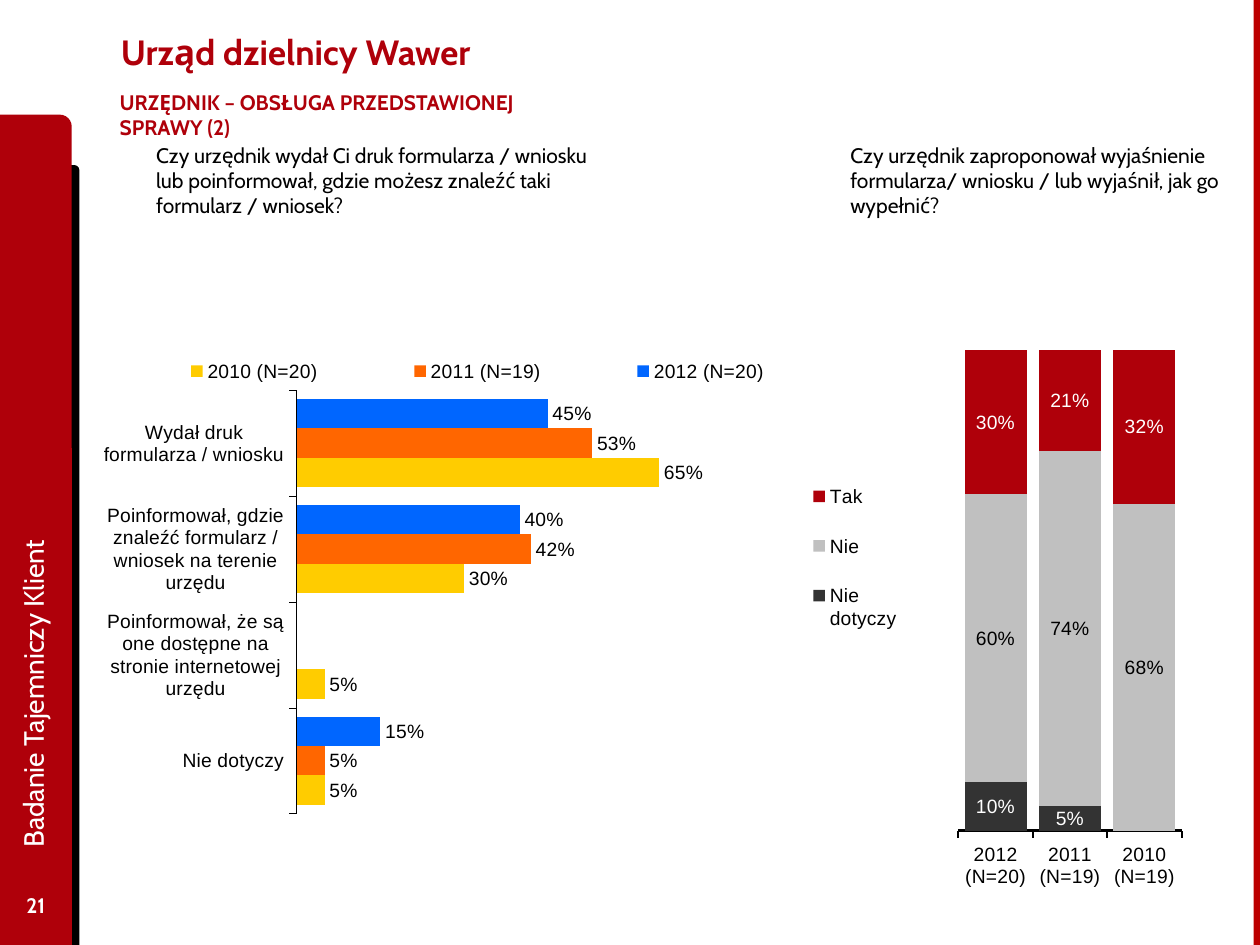
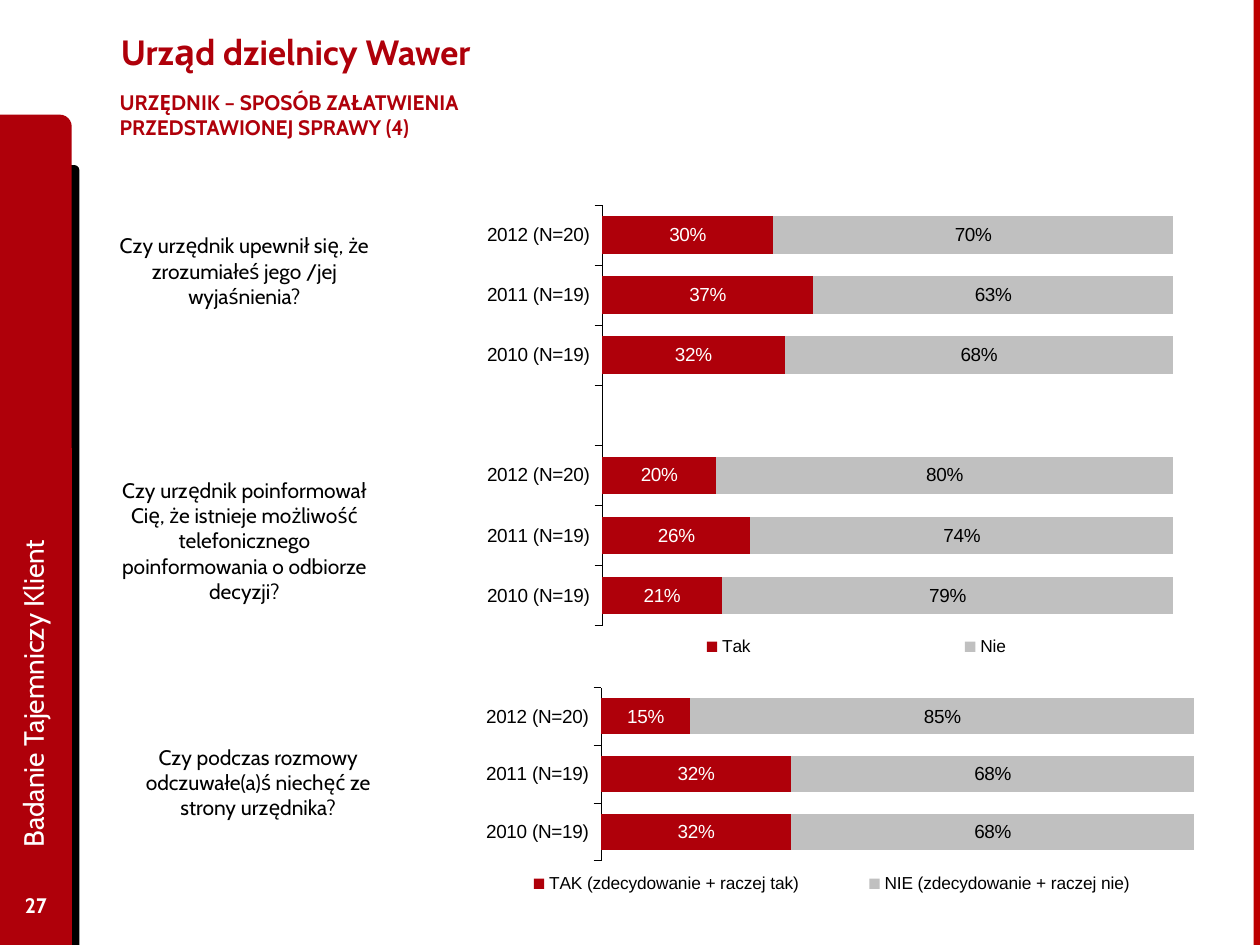
from collections import namedtuple
from dataclasses import dataclass

from lxml import etree
from pptx import Presentation
from pptx.chart.data import CategoryChartData
from pptx.dml.color import RGBColor
from pptx.enum.chart import (XL_CHART_TYPE, XL_LABEL_POSITION,
                             XL_LEGEND_POSITION, XL_TICK_MARK)
from pptx.enum.shapes import MSO_SHAPE
from pptx.enum.text import MSO_ANCHOR, MSO_AUTO_SIZE, PP_ALIGN
from pptx.oxml.ns import qn
from pptx.util import Inches, Pt

LEFT, CENTER = PP_ALIGN.LEFT, PP_ALIGN.CENTER
TOP, MIDDLE = MSO_ANCHOR.TOP, MSO_ANCHOR.MIDDLE
RECTANGLE, ROUND_CORNER = MSO_SHAPE.RECTANGLE, MSO_SHAPE.ROUND_1_RECTANGLE
COLUMNS_FULL = XL_CHART_TYPE.COLUMN_STACKED_100
BARS_CLUSTERED = XL_CHART_TYPE.BAR_CLUSTERED
BARS_STACKED = XL_CHART_TYPE.BAR_STACKED
LABEL_CENTER = XL_LABEL_POSITION.CENTER
LABEL_OUTSIDE = XL_LABEL_POSITION.OUTSIDE_END
LEGEND_LEFT = XL_LEGEND_POSITION.LEFT
LEGEND_RIGHT = XL_LEGEND_POSITION.RIGHT
LEGEND_BOTTOM = XL_LEGEND_POSITION.BOTTOM
TICK_OUTSIDE, TICK_NONE = XL_TICK_MARK.OUTSIDE, XL_TICK_MARK.NONE
TITLE_ONLY = 5
COLUMNS, ROWS = 100, 75  # grid over the whole slide

Series = namedtuple("Series", "name values fill label")


@dataclass(frozen=True)
class Theme:
    red: str = "AF000A"
    edge: str = "BD0000"
    black: str = "000000"
    white: str = "FFFFFF"
    grey: str = "C0C0C0"
    dark: str = "333333"
    blue: str = "0066FF"
    orange: str = "FF6600"
    yellow: str = "FFCC00"
    text_font: str = "Cabin"
    chart_font: str = "Arial"
    title: float = 20
    side: float = 16
    body: float = 12
    chart: float = 11
    small_chart: float = 10.8
    small_legend: float = 9.9


THEME = Theme()


def rgb(colour):
    return RGBColor.from_string(colour)


def manual_layout(shares, inner=False):
    """Return a chart layout element from left, top, width, height shares."""
    layout = etree.Element(qn("c:layout"))
    manual = etree.SubElement(layout, qn("c:manualLayout"))
    settings = [("layoutTarget", "inner")] if inner else []
    settings += [("xMode", "edge"), ("yMode", "edge")]
    settings += zip("xywh", shares)
    for tag, value in settings:
        etree.SubElement(manual, qn(f"c:{tag}")).set("val", str(value))
    return layout


def drop_layout(element):
    for layout in element.findall(qn("c:layout")):
        element.remove(layout)


class Report:
    def __init__(self, theme):
        self.theme = theme
        self.deck = Presentation()
        self.deck.slide_width, self.deck.slide_height = Inches(10), Inches(7.5)
        self.slide = None

    def place(self, left, top, width, height):
        """Turn grid columns and rows into slide lengths."""
        column = self.deck.slide_width / COLUMNS
        row = self.deck.slide_height / ROWS
        return (round(left * column), round(top * row),
                round(width * column), round(height * row))

    def style(self, frame, size, colour, bold=False, align=LEFT, anchor=TOP):
        frame.vertical_anchor = anchor
        for para in frame.paragraphs:
            para.alignment = align
            for span in para.runs:
                span.font.name = self.theme.text_font
                span.font.size = Pt(size)
                span.font.bold = bold
                span.font.color.rgb = rgb(colour)

    def band(self, kind, cells, colour):
        shape = self.slide.shapes.add_shape(kind, *self.place(*cells))
        shape.shadow.inherit = False
        shape.fill.solid()
        shape.fill.fore_color.rgb = rgb(colour)
        shape.line.fill.background()

    def text(self, words, cells, size, colour, **look):
        box = self.slide.shapes.add_textbox(*self.place(*cells))
        box.text_frame.word_wrap = True
        box.text_frame.text = words
        self.style(box.text_frame, size, colour, **look)
        return box

    def question(self, words, cells, align=LEFT):
        box = self.text(words, cells, self.theme.body, self.theme.black, align=align)
        box.text_frame.auto_size = MSO_AUTO_SIZE.SHAPE_TO_FIT_TEXT

    def page(self, title, subtitle, number):
        """Start a slide with its bands, headings and side label."""
        theme = self.theme
        self.slide = self.deck.slides.add_slide(self.deck.slide_layouts[TITLE_ONLY])
        self.band(ROUND_CORNER, (3.9, 13.1, 2.4, 61.9), theme.black)
        self.band(ROUND_CORNER, (0, 9.1, 5.7, 65.9), theme.red)
        self.band(RECTANGLE, (99.5, 0, 0.5, ROWS), theme.edge)

        heading = self.slide.shapes.title
        heading.left, heading.top, heading.width, heading.height = self.place(
            8.6, 0.5, 77.7, 7.2)
        heading.text_frame.text = title
        heading.text_frame.auto_size = MSO_AUTO_SIZE.NONE
        self.style(heading.text_frame, theme.title, theme.red, bold=True, anchor=MIDDLE)

        frame = self.text(subtitle, (7.5, 6.6, 38.5, 3.3), theme.body, theme.red,
                          bold=True).text_frame
        frame.word_wrap = False
        frame.margin_left = frame.margin_right = Inches(0.2)

        self.text(number, (0, 69.8, 5.7, 4), theme.body, theme.white,
                  bold=True, align=CENTER, anchor=MIDDLE)
        side = self.text("Badanie Tajemniczy Klient", (-26.2, 36.9, 57.6, 5.1),
                         theme.side, theme.white, anchor=MIDDLE)
        side.rotation = 270

    def chart(self, kind, cells, categories, series, plot_area, legend, legend_area,
              size, legend_size, gap=60, axis_width=0.25):
        data = CategoryChartData(number_format="0%")
        data.categories = categories
        for item in series:
            data.add_series(item.name, item.values)
        chart = self.slide.shapes.add_chart(kind, *self.place(*cells), data).chart
        chart.has_title = False
        chart.font.name = self.theme.chart_font
        chart.font.size = Pt(size)
        chart.font.color.rgb = rgb(self.theme.black)

        # Bars and their labels
        clustered = kind == BARS_CLUSTERED
        plot = chart.plots[0]
        plot.vary_by_categories = False
        plot.gap_width = gap
        plot.overlap = 0 if clustered else 100
        for drawn, item in zip(plot.series, series):
            drawn.invert_if_negative = False
            drawn.format.fill.solid()
            drawn.format.fill.fore_color.rgb = rgb(item.fill)
            labels = drawn.data_labels
            labels.show_value = True
            labels.number_format = "0%"
            labels.number_format_is_linked = False
            labels.position = LABEL_OUTSIDE if clustered else LABEL_CENTER
            labels.font.name = self.theme.chart_font
            labels.font.size = Pt(size)
            labels.font.color.rgb = rgb(item.label)

        # Axes
        values = chart.value_axis
        values.minimum_scale, values.maximum_scale = 0, 1
        values.major_unit = 0.2
        values.has_major_gridlines = False
        values.visible = False
        axis = chart.category_axis
        axis.reverse_order = kind != COLUMNS_FULL
        axis.has_major_gridlines = False
        axis.major_tick_mark, axis.minor_tick_mark = TICK_OUTSIDE, TICK_NONE
        axis.format.line.color.rgb = rgb(self.theme.black)
        axis.format.line.width = Pt(axis_width)

        # Legend and plot area
        chart.has_legend = True
        chart.legend.position = legend
        chart.legend.include_in_layout = False
        chart.legend.font.name = self.theme.chart_font
        chart.legend.font.size = Pt(legend_size)
        chart.legend.font.color.rgb = rgb(self.theme.black)
        key = chart.legend._element
        drop_layout(key)
        key.find(qn("c:legendPos")).addnext(manual_layout(legend_area))
        area = chart._chartSpace.chart.plotArea
        drop_layout(area)
        area.insert(0, manual_layout(plot_area, inner=True))

    def yes_no_chart(self, cells, categories, names, shares, **layout):
        """Stacked bars where the second series completes the first."""
        theme = self.theme
        rest = [None if share is None else round(1 - share, 2) for share in shares]
        series = [Series(names[0], shares, theme.red, theme.white),
                  Series(names[1], rest, theme.grey, theme.black)]
        self.chart(BARS_STACKED, cells, categories, series, size=theme.small_chart,
                   legend_size=theme.small_legend, **layout)


def form_slide(report):
    theme = report.theme
    report.page("Urząd dzielnicy Wawer",
                "URZĘDNIK – OBSŁUGA PRZEDSTAWIONEJ SPRAWY (2)", "21")
    report.question("Czy urzędnik zaproponował wyjaśnienie formularza/ wniosku / "
                    "lub wyjaśnił, jak go wypełnić?", (66.5, 10.8, 31.5, 7.1))
    report.question("Czy urzędnik wydał Ci druk formularza / wniosku lub poinformował, "
                    "gdzie możesz znaleźć taki formularz / wniosek?",
                    (11.4, 10.8, 36.9, 7.1))
    report.chart(
        COLUMNS_FULL, (61.9, 24.9, 32.2, 47.7), YEARS,
        [Series("Nie dotyczy", (0.1, 0.05, None), theme.dark, theme.white),
         Series("Nie", (0.6, 0.74, 0.68), theme.grey, theme.black),
         Series("Tak", (0.3, 0.21, 0.32), theme.red, theme.white)],
        plot_area=(0.44, 0.06, 0.55, 0.8), legend=LEGEND_LEFT,
        legend_area=(0.05, 0.24, 0.27, 0.33), size=theme.chart,
        legend_size=theme.chart, gap=20, axis_width=1.17)
    report.chart(
        BARS_CLUSTERED, (8, 26.8, 59.8, 37.8),
        ["Wydał druk formularza / wniosku",
         "Poinformował, gdzie znaleźć formularz / wniosek na terenie urzędu",
         "Poinformował, że są one dostępne na stronie internetowej urzędu",
         "Nie dotyczy"],
        [Series("2012 (N=20)", (0.45, 0.4, None, 0.15), theme.blue, theme.black),
         Series("2011 (N=19)", (0.53, 0.42, None, 0.05), theme.orange, theme.black),
         Series("2010 (N=20)", (0.65, 0.3, 0.05, 0.05), theme.yellow, theme.black)],
        plot_area=(0.26, 0.11, 0.74, 0.89), legend=LEGEND_RIGHT,
        legend_area=(0, 0.03, 1, 0.08), size=theme.chart, legend_size=theme.chart)


def manner_slide(report):
    report.page("Urząd dzielnicy Wawer",
                "URZĘDNIK – SPOSÓB ZAŁATWIENIA PRZEDSTAWIONEJ SPRAWY (4)", "27")
    questions = [
        ("Czy urzędnik poinformował Cię, że istnieje możliwość telefonicznego "
         "poinformowania o odbiorze decyzji?", (7.5, 37.4, 23.8, 11.1)),
        ("Czy urzędnik upewnił się, że zrozumiałeś jego /jej wyjaśnienia?",
         (7.5, 18, 23.8, 7.1)),
        ("Czy podczas rozmowy odczuwałe(a)ś niechęć ze strony urzędnika?",
         (8.6, 58.6, 23.8, 7.1)),
    ]
    for words, cells in questions:
        report.question(words, cells, align=CENTER)
    report.yes_no_chart(
        (7.6, 54.4, 87.2, 17.4), YEARS,
        ("TAK (zdecydowanie + raczej tak)", "NIE (zdecydowanie + raczej nie)"),
        (0.15, 0.32, 0.32), plot_area=(0.46, 0.01, 0.54, 0.79),
        legend=LEGEND_BOTTOM, legend_area=(0.34, 0.83, 0.66, 0.15))
    report.yes_no_chart(
        (14, 15.9, 82.4, 37.1), YEARS + [""] + YEARS, ("Tak", "Nie"),
        (0.3, 0.37, 0.32, None, 0.2, 0.26, 0.21), plot_area=(0.41, 0.01, 0.55, 0.9),
        legend=LEGEND_RIGHT, legend_area=(0.31, 0.92, 0.69, 0.07))


YEARS = ["2012 (N=20)", "2011 (N=19)", "2010 (N=19)"]


def main():
    report = Report(THEME)
    form_slide(report)
    manner_slide(report)
    report.deck.save("out.pptx")


if __name__ == "__main__":
    main()
